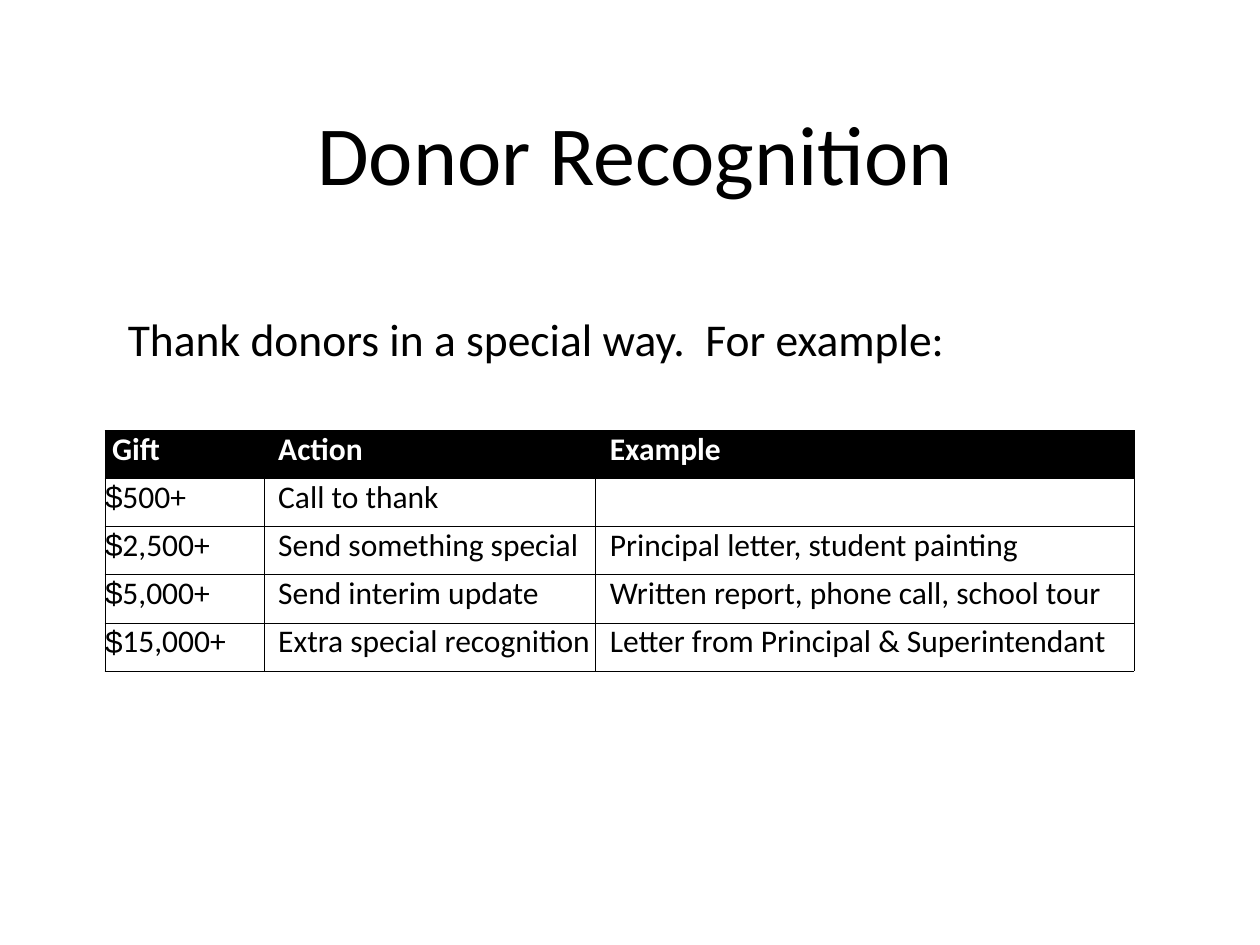
from lxml import etree
from pptx import Presentation
from pptx import util as u
from pptx.dml import color
from pptx.enum import text
from pptx.oxml import ns

BLACK, WHITE = "000000", "FFFFFF"


def rgb(value):
    return color.RGBColor.from_string(value)


def style(para, size, ink=BLACK, bold=False):
    para.font.name = "Calibri"
    para.font.size = u.Pt(size)
    para.font.bold = bold
    para.font.color.rgb = rgb(ink)


deck = Presentation()
deck.slide_width, deck.slide_height = u.Pt(720), u.Pt(540)
page = deck.slides.add_slide(deck.slide_layouts[6])

# Title and lead-in
center, justify = text.PP_ALIGN.CENTER, text.PP_ALIGN.JUSTIFY
middle, top = text.MSO_ANCHOR.MIDDLE, text.MSO_ANCHOR.TOP
for words, area, size, align, anchor in (
    ("Donor Recognition", (42, 36, 642, 102), 48, center, middle),
    ("Thank donors in a special way.  For example:", (66, 174, 570, 54), 26, justify, top),
):
    box = page.shapes.add_textbox(*map(u.Pt, area))
    box.text_frame.word_wrap = True
    box.text_frame.vertical_anchor = anchor
    para = box.text_frame.paragraphs[0]
    para.text = words
    para.alignment = align
    style(para, size)

# Gift table
rows = (
    ("Gift", "Action", "Example"),
    ("500+", "Call to thank", ""),
    ("2,500+", "Send something special", "Principal letter, student painting"),
    ("5,000+", "Send interim update", "Written report, phone call, school tour"),
    ("15,000+", "Extra special recognition", "Letter from Principal & Superintendant"),
)
widths = (91, 189.5, 307.5)
row_height = 27.5
table = page.shapes.add_table(
    len(rows), len(widths), u.Pt(60), u.Pt(246),
    u.Pt(sum(widths)), u.Pt(row_height * len(rows)),
).table
table.horz_banding = False
for column, width in zip(table.columns, widths):
    column.width = u.Pt(width)

for r, row in enumerate(rows):
    table.rows[r].height = u.Pt(row_height)
    header = r == 0
    for c, words in enumerate(row):
        cell = table.cell(r, c)
        cell.margin_right = cell.margin_top = cell.margin_bottom = 0
        cell.margin_left = u.Pt(8 if c else 4 if header else 0)
        para = cell.text_frame.paragraphs[0]
        para.text = words
        style(para, 18, WHITE if header else BLACK, header)

        # Thin black borders
        props = cell._tc.get_or_add_tcPr()
        for side in ("lnL", "lnR", "lnT", "lnB"):
            line = etree.SubElement(props, ns.qn(f"a:{side}"), w=str(u.Pt(0.5)))
            fill = etree.SubElement(line, ns.qn("a:solidFill"))
            etree.SubElement(fill, ns.qn("a:srgbClr"), val=BLACK)
        if header:
            cell.fill.solid()
            cell.fill.fore_color.rgb = rgb(BLACK)
        else:
            cell.fill.background()

        # Dollar sign as the bullet of each amount
        if c == 0 and not header:
            props = para._p.get_or_add_pPr()
            props.set("marL", "0")
            props.set("indent", "0")
            tint = etree.SubElement(props, ns.qn("a:buClr"))
            etree.SubElement(tint, ns.qn("a:srgbClr"), val=BLACK)
            etree.SubElement(props, ns.qn("a:buFont"), typeface="Arial")
            etree.SubElement(props, ns.qn("a:buChar"), char="$")
            # Default run properties come after the bullet
            props.append(props.find(ns.qn("a:defRPr")))

deck.save("out.pptx")
